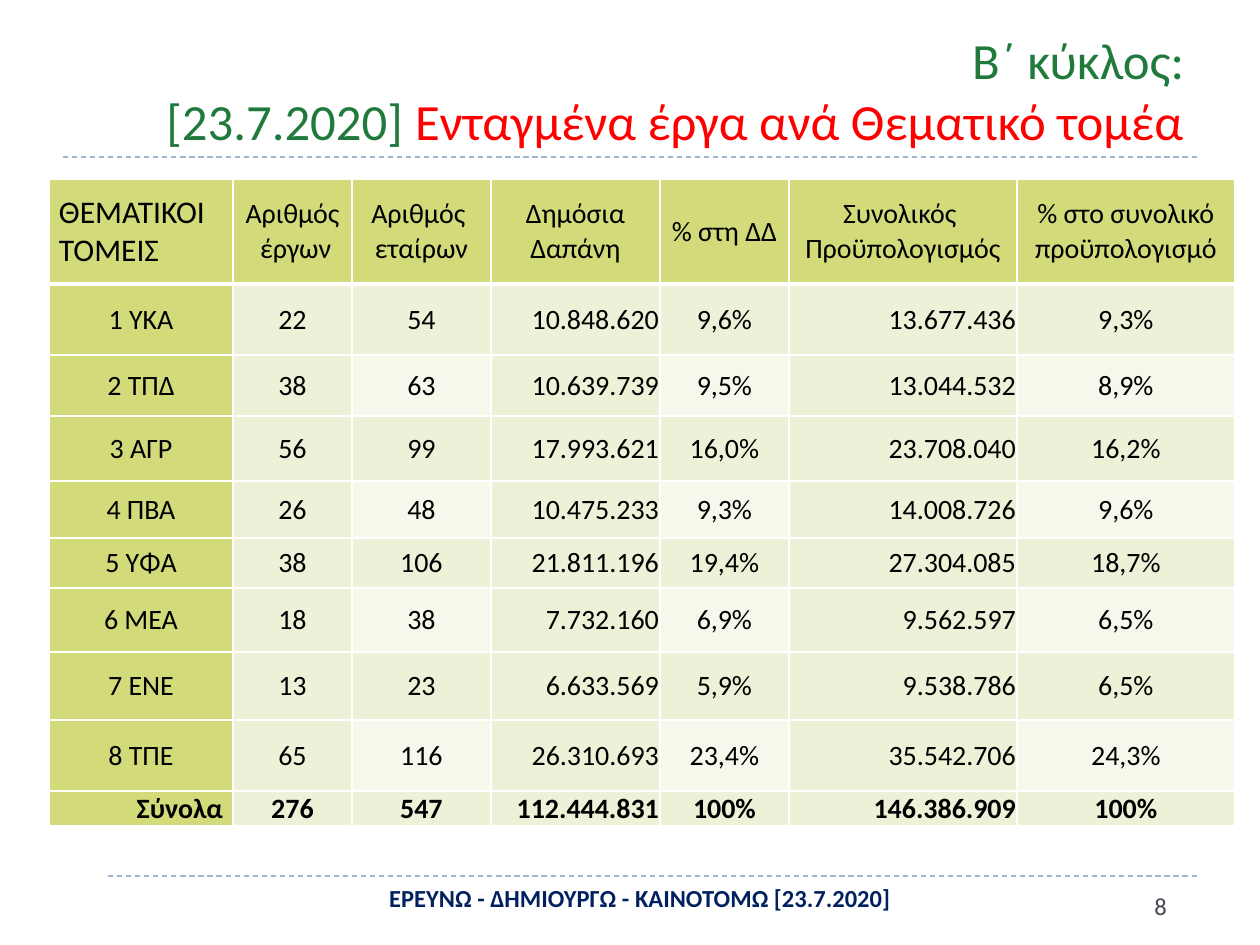
from lxml import etree
from pptx import Presentation
from pptx.dml.color import RGBColor
from pptx.enum.dml import MSO_LINE
from pptx.enum.shapes import MSO_CONNECTOR, MSO_SHAPE
from pptx.enum.text import MSO_ANCHOR, MSO_AUTO_SIZE, PP_ALIGN
from pptx.oxml.ns import qn
from pptx.util import Emu, Pt

LEFT, CENTER, RIGHT = PP_ALIGN.LEFT, PP_ALIGN.CENTER, PP_ALIGN.RIGHT
MIDDLE, BOTTOM = MSO_ANCHOR.MIDDLE, MSO_ANCHOR.BOTTOM
NO_FIT, DASH = MSO_AUTO_SIZE.NONE, MSO_LINE.DASH
STRAIGHT, RECTANGLE = MSO_CONNECTOR.STRAIGHT, MSO_SHAPE.RECTANGLE
PX = 914400 / 126

THEME = {
    "font": "Calibri",
    "white": "FFFFFF", "rule": "9FB8CD", "green": "207A3C", "red": "FF0000",
    "olive": "D2DA7A", "band": "EEF1D7", "pale": "F7F8EC",
    "black": "000000", "navy": "002060", "slate": "464653",
    "title": 29, "corner": 18, "cell": 16, "footer": 14,
}


def px(*lengths):
    return [Emu(round(length * PX)) for length in lengths]


def style(font, color, size, bold=False):
    values = {"name": THEME["font"], "size": Pt(THEME[size]), "bold": bold}
    for name, value in values.items():
        setattr(font, name, value)
    font.color.rgb = RGBColor.from_string(THEME[color])


prs = Presentation()
prs.slide_width, prs.slide_height = px(1260, 945)
slide = prs.slides.add_slide(prs.slide_layouts[5])

for y in (876, 157):
    rule = slide.shapes.add_connector(STRAIGHT, *px(63, y, 1197, y))
    rule.line.color.rgb = RGBColor.from_string(THEME["rule"])
    rule.line.width = Pt(0.75)
    rule.line.dash_style = DASH
    etree.SubElement(rule._element.spPr, qn("a:effectLst"))

rule_mask = slide.shapes.add_shape(RECTANGLE, *px(54, 863, 54, 55))
rule_mask.shadow.inherit = False
rule_mask.fill.solid()
rule_mask.fill.fore_color.rgb = RGBColor.from_string(THEME["white"])
rule_mask.line.fill.background()

heading = slide.shapes.title
heading.left, heading.top, heading.width, heading.height = px(154, 21, 1043, 136)
for name, value in {"vertical_anchor": BOTTOM, "auto_size": NO_FIT, "word_wrap": True,
                    "margin_left": 0}.items():
    setattr(heading.text_frame, name, value)
heading_line = heading.text_frame.paragraphs[0]
heading_line.alignment = RIGHT
for text, color in (("Β΄ κύκλος:", "green"), ("[23.7.2020] ", "green"),
                    ("Ενταγμένα έργα ανά Θεματικό τομέα", "red")):
    run = heading_line.add_run()
    run.text = text
    style(run.font, color, "title")
    if text.endswith(":"):
        heading_line.add_line_break()

projects = [
    ["ΘΕΜΑΤΙΚΟΙ ΤΟΜΕΙΣ", "Αριθμός  έργων", "Αριθμός  εταίρων", "Δημόσια Δαπάνη",
     "% στη ΔΔ", "Συνολικός  Προϋπολογισμός", "% στο συνολικό προϋπολογισμό"],
    ["1 ΥΚΑ", "22", "54", "10.848.620", "9,6%", "13.677.436", "9,3%"],
    ["2 ΤΠΔ", "38", "63", "10.639.739", "9,5%", "13.044.532", "8,9%"],
    ["3 ΑΓΡ", "56", "99", "17.993.621", "16,0%", "23.708.040", "16,2%"],
    ["4 ΠΒΑ", "26", "48", "10.475.233", "9,3%", "14.008.726", "9,6%"],
    ["5 ΥΦΑ", "38", "106", "21.811.196", "19,4%", "27.304.085", "18,7%"],
    ["6 ΜΕΑ", "18", "38", "7.732.160", "6,9%", "9.562.597", "6,5%"],
    ["7 ΕΝΕ", "13", "23", "6.633.569", "5,9%", "9.538.786", "6,5%"],
    ["8 ΤΠΕ", "65", "116", "26.310.693", "23,4%", "35.542.706", "24,3%"],
    ["Σύνολα", "276", "547", "112.444.831", "100%", "146.386.909", "100%"],
]
widths = [184, 119, 139, 169, 129, 228, 218]
heights = [105, 71, 61, 65, 57, 50, 64, 68, 71, 35]
total = len(projects) - 1

table = slide.shapes.add_table(
    len(heights), len(widths), *px(49, 179, sum(widths), sum(heights))).table
for column, width in zip(table.columns, px(*widths)):
    column.width = width
for row, height in zip(table.rows, px(*heights)):
    row.height = height

for r, record in enumerate(projects):
    for c, text in enumerate(record):
        cell = table.cell(r, c)
        corner = r == c == 0
        wide = r == 0 or (r == total and c == 0)
        amount = r > 0 and c in (3, 5)
        side, top = px(10 if wide else 1, 0 if wide else 1)
        for name, value in {"text": text, "vertical_anchor": MIDDLE, "margin_left": side,
                            "margin_right": side, "margin_top": top, "margin_bottom": 0}.items():
            setattr(cell, name, value)

        paragraph = cell.text_frame.paragraphs[0]
        right = amount or (r == total and c == 0)
        paragraph.alignment = LEFT if corner else RIGHT if right else CENTER
        style(paragraph.runs[0].font, "black", "corner" if corner else "cell", r == total)

        striped = r % 2 == 0 and c in (2, 4, 6)
        shade = "olive" if r == 0 or c == 0 else "pale" if striped else "band"
        cell.fill.solid()
        cell.fill.fore_color.rgb = RGBColor.from_string(THEME[shade])

        properties = cell._tc.get_or_add_tcPr()
        for position, edge in enumerate(("lnL", "lnR", "lnT", "lnB")):
            heavy = (r, edge) in ((0, "lnB"), (1, "lnT"))
            border = etree.Element(qn(f"a:{edge}"), w=str(Pt(3 if heavy else 1)))
            fill = etree.SubElement(border, qn("a:solidFill"))
            etree.SubElement(fill, qn("a:srgbClr"), val=THEME["white"])
            properties.insert(position, border)

for text, box, color, bold, alignment in (
    ("ΕΡΕΥΝΩ - ΔΗΜΙΟΥΡΓΩ - ΚΑΙΝΟΤΟΜΩ [23.7.2020]", (243, 877, 794, 42), "navy", True, CENTER),
    ("8", (1142, 885, 63, 50), "slate", False, LEFT),
):
    frame = slide.shapes.add_textbox(*px(*box)).text_frame
    frame.word_wrap = True
    frame.text = text
    frame.paragraphs[0].alignment = alignment
    style(frame.paragraphs[0].runs[0].font, color, "footer", bold)

prs.save("out.pptx")
